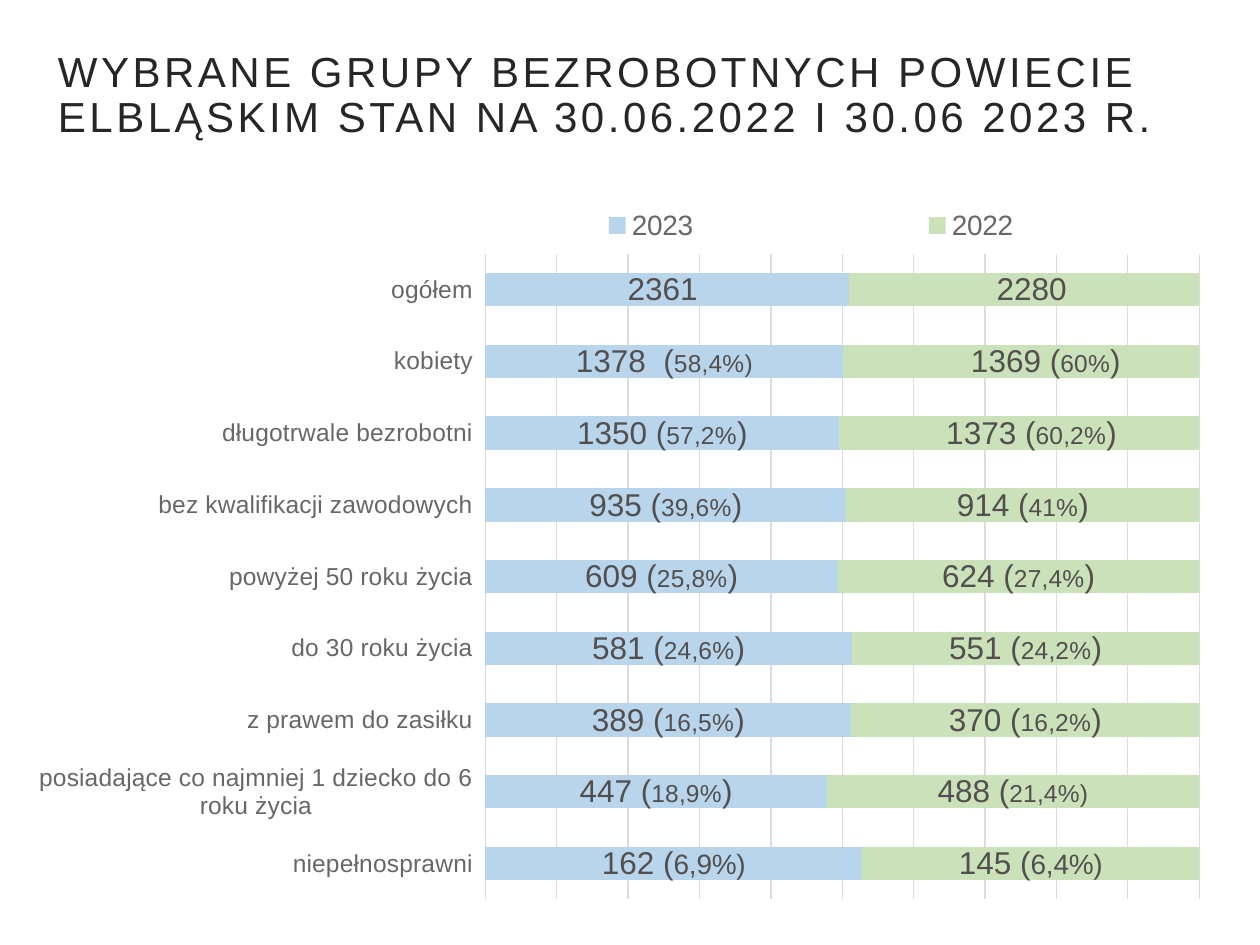
from lxml import etree
from pptx import Presentation
from pptx.chart.data import CategoryChartData
from pptx.dml.color import RGBColor
from pptx.enum.chart import XL_CHART_TYPE as ChartType, XL_LABEL_POSITION as LabelPosition
from pptx.enum.chart import XL_LEGEND_POSITION as LegendPosition, XL_TICK_LABEL_POSITION as TickLabels
from pptx.enum.chart import XL_TICK_MARK as TickMark
from pptx.enum.text import MSO_ANCHOR as Anchor, MSO_AUTO_SIZE as AutoSize, PP_ALIGN as Align
from pptx.oxml import parse_xml
from pptx.oxml.ns import nsdecls, qn
from pptx.util import Inches, Pt

TITLE = "WYBRANE GRUPY BEZROBOTNYCH POWIECIE ELBLĄSKIM STAN NA 30.06.2022 I 30.06 2023 R."
YEARS = {"2023": "B9D5EC", "2022": "CAE1B9"}
GROUPS = [
    ("niepełnosprawni", (162, 145), ("162 (|6,9%)", "145 (|6,4%)")),
    ("posiadające co najmniej 1 dziecko do 6 roku życia", (447, 488), ("447 (|18,9%|)", "488 (|21,4%)")),
    ("z prawem do zasiłku", (389, 370), ("389 (|16,5%|)", "370 (|16,2%|)")),
    ("do 30 roku życia", (581, 551), ("581 (|24,6%|)", "551 (|24,2%|)")),
    ("powyżej 50 roku życia", (609, 624), ("609 (|25,8%|)", "624 (|27,4%|)")),
    ("bez kwalifikacji zawodowych", (935, 914), ("935 (|39,6%|)", "914 (|41%|)")),
    ("długotrwale bezrobotni", (1350, 1373), ("1350 (|57,2%|)", "1373 (|60,2%|)")),
    ("kobiety", (1378, 1369), ("1378  (|58,4%)", "1369 (|60%|)")),
    ("ogółem", (2361, 2280), ("2361 ", "2280 ")),
]
LABEL_SHIFTS = {("2022", 6): 0.01, ("2022", 7): 0.02, ("2022", 8): 0.01}


def color(value):
    """Turn a hex string into a colour."""
    return RGBColor.from_string(value)


def format_font(font, size, fill, name="Arial"):
    """Set the size, colour and typeface of a font."""
    font.size, font.name, font.bold = Pt(size), name, False
    font.color.rgb = color(fill)


def add_text(paragraph, text, size=18, fill="524F4F", spacing=None):
    """Append a formatted run to a paragraph."""
    run = paragraph.add_run()
    run.text = text
    format_font(run.font, size, fill)
    if spacing:
        run.font._element.set("spc", str(spacing * 100))


def make_layout(inner=False, **values):
    """Make a manual chart layout from fractions of the chart."""
    layout = parse_xml(f"<c:layout {nsdecls('c')}><c:manualLayout/></c:layout>")
    fields = {"layoutTarget": "inner"} if inner else {}
    if "w" in values:
        fields.update(xMode="edge", yMode="edge")
    for name, value in {**fields, **values}.items():
        etree.SubElement(layout[0], qn(f"c:{name}")).set("val", str(value))
    return layout


def place(element, layout, index):
    """Put a layout into a chart element in place of any present one."""
    for present in element.findall(qn("c:layout")):
        element.remove(present)
    element.insert(index, layout)


def fill_title(title):
    """Move, fill and format the title placeholder."""
    title.left, title.top, title.width, title.height = map(Inches, (0.16, 0.22, 9.69, 1.09))
    frame = title.text_frame
    frame.word_wrap, frame.auto_size = True, AutoSize.NONE
    frame.vertical_anchor = Anchor.MIDDLE
    frame.margin_left = frame.margin_right = frame.margin_top = frame.margin_bottom = Inches(0.2)
    paragraph = frame.paragraphs[0]
    paragraph.alignment, paragraph.line_spacing = Align.LEFT, 0.9
    properties = paragraph._p.get_or_add_pPr()
    properties.set("marL", str(Inches(0.1)))
    properties.set("indent", "0")
    add_text(paragraph, TITLE, size=24, fill="262626", spacing=2)


def add_point_label(series, index, text):
    """Label one bar, with the percentage in smaller type."""
    label = series.points[index].data_label
    paragraph = label.text_frame.paragraphs[0]
    small = 16 if index == 0 else 14
    for part, words in enumerate(text.split("|")):
        add_text(paragraph, words, size=small if part % 2 else 18)
    label.position = LabelPosition.CENTER
    shift = LABEL_SHIFTS.get((series.name, index))
    if shift:
        element = series._element.find(qn("c:dLbls")).findall(qn("c:dLbl"))[index]
        place(element, make_layout(x=shift, y=0), 1)


def format_series(series, column):
    """Colour a series and label its bars."""
    series.format.fill.solid()
    series.format.fill.fore_color.rgb = color(YEARS[series.name])
    labels = series.data_labels
    labels.show_value, labels.position = True, LabelPosition.CENTER
    format_font(labels.font, 18, "524F4F")
    for index, (_, _, texts) in enumerate(GROUPS):
        add_point_label(series, index, texts[column])


def format_axes(chart):
    """Format the category labels and the grid."""
    category, value = chart.category_axis, chart.value_axis
    category.major_tick_mark = category.minor_tick_mark = TickMark.NONE
    category.tick_label_position = TickLabels.LOW
    format_font(category.tick_labels.font, 14, "6A6666")
    value.visible, value.has_major_gridlines = False, True
    value.minimum_scale, value.maximum_scale, value.major_unit = 0, 1, 0.1
    for line, width in ((category.format.line, 1), (value.major_gridlines.format.line, 0.75)):
        line.color.rgb, line.width = color("DDDBDB"), Pt(width)


def format_legend(chart):
    """Spread the legend above the bars."""
    chart.has_legend = True
    legend = chart.legend
    legend.position, legend.include_in_layout = LegendPosition.BOTTOM, False
    format_font(legend.font, 16, "6A6666")
    place(legend._element, make_layout(x=0.3, y=0.01, w=0.7, h=0.07), 1)


def add_bar_chart(slide):
    """Add the stacked bars that compare the two years."""
    data = CategoryChartData()
    data.categories = [name for name, _, _ in GROUPS]
    for column, year in enumerate(YEARS):
        data.add_series(year, [values[column] for _, values, _ in GROUPS])
    frame = slide.shapes.add_chart(
        ChartType.BAR_STACKED_100, *map(Inches, (0.12, 1.53, 9.72, 5.77)), data)
    chart = frame.chart
    chart.has_title = False
    format_font(chart.font, 10, "171616", name="Calibri")
    plot = chart.plots[0]
    plot.gap_width, plot.overlap, plot.vary_by_categories = 115, 100, False
    for column, series in enumerate(plot.series):
        format_series(series, column)
    format_axes(chart)
    format_legend(chart)
    area = chart._chartSpace.chart.plotArea
    place(area, make_layout(inner=True, x=0.384, y=0.084, w=0.583, h=0.888), 0)


def main():
    """Build and save the slide."""
    presentation = Presentation()
    presentation.slide_width, presentation.slide_height = Inches(10), Inches(7.5)
    slide = presentation.slides.add_slide(presentation.slide_layouts[5])
    fill_title(slide.shapes.title)
    add_bar_chart(slide)
    presentation.save("out.pptx")


if __name__ == "__main__":
    main()
